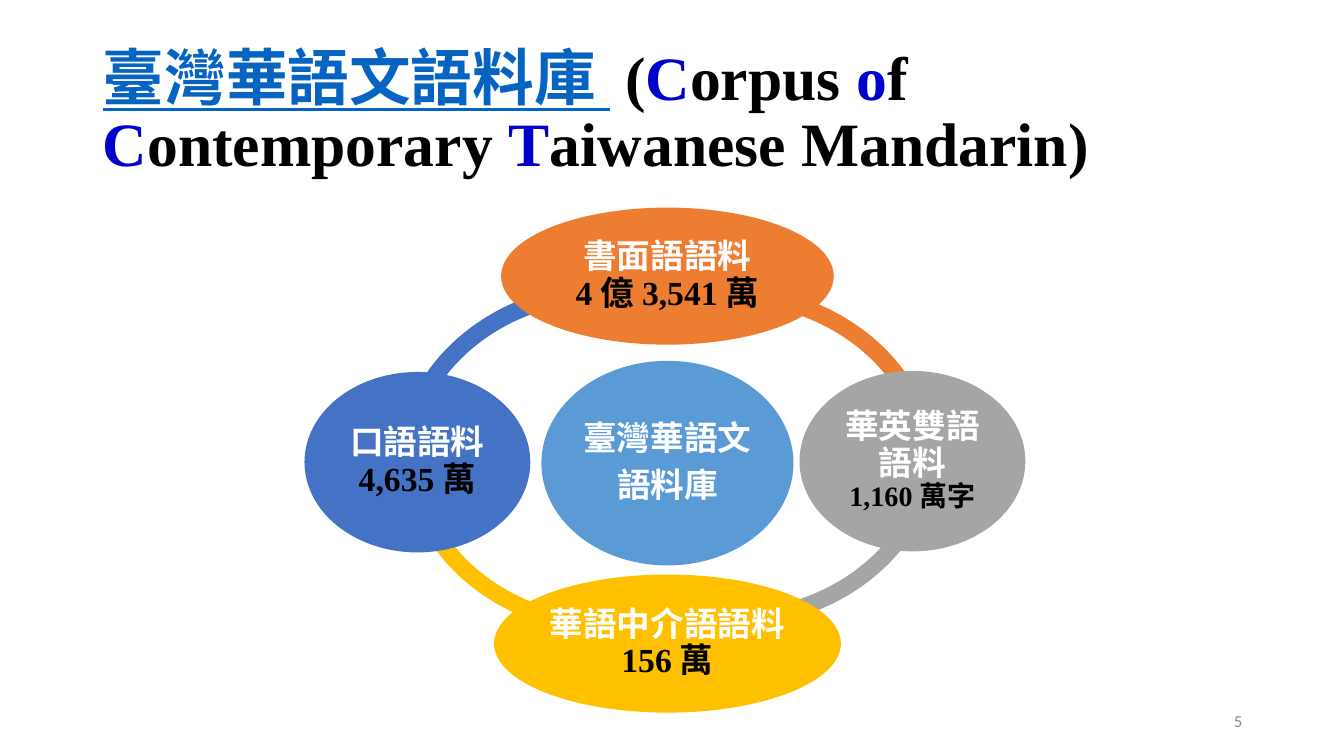
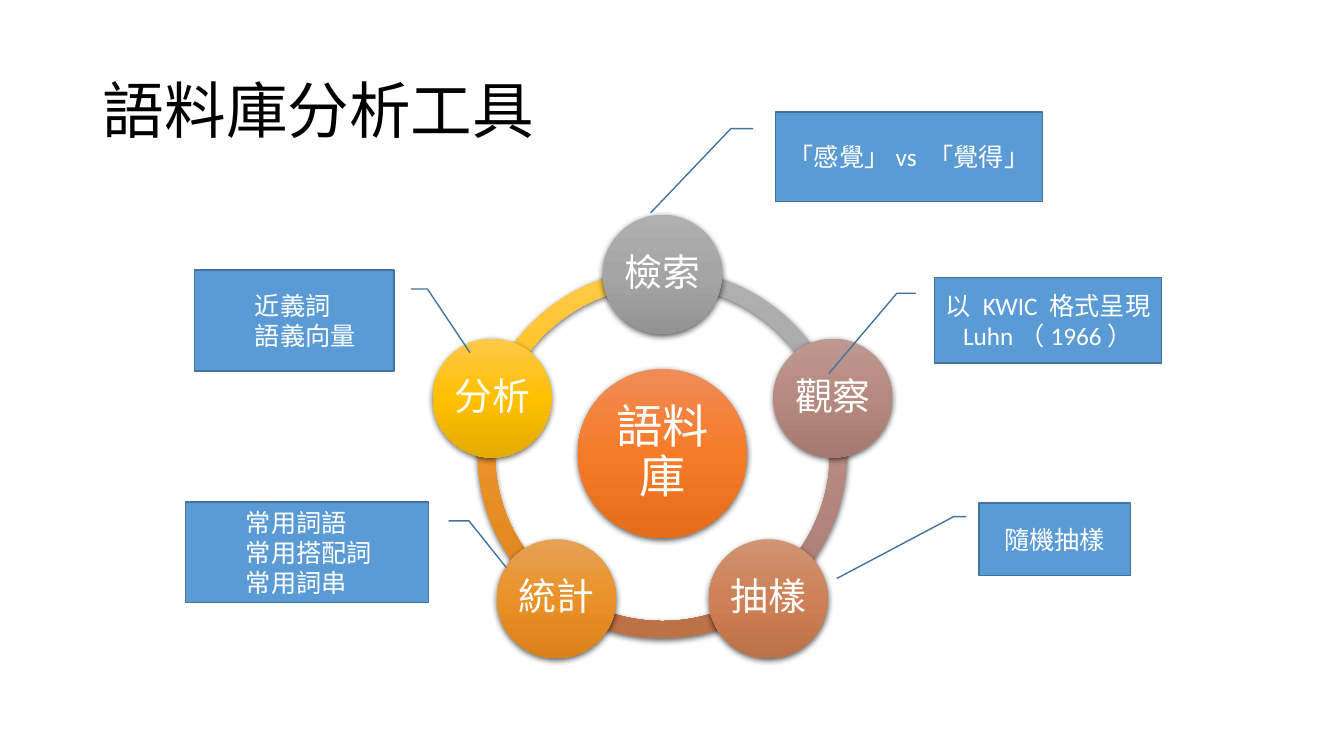
from copy import deepcopy
from dataclasses import dataclass
from math import cos, radians, sin
from typing import Optional, Sequence, Union

from lxml.etree import SubElement
from pptx import Presentation
from pptx.dml.color import RGBColor
from pptx.enum.shapes import MSO_SHAPE as Preset
from pptx.enum.text import MSO_ANCHOR as Anchor, MSO_AUTO_SIZE as AutoSize, PP_ALIGN as Align
from pptx.oxml.ns import qn
from pptx.util import Emu, Pt

EMU_PER_PX = 9144


@dataclass(frozen=True)
class Theme:
    """Colours, fonts and type sizes of the deck."""

    black: str = "000000"
    white: str = "FFFFFF"
    link: str = "0563C1"
    initial: str = "0000CC"
    page_number: str = "8C8C8C"
    blue: str = "4472C4"
    sky: str = "5B9BD5"
    orange: str = "ED7D31"
    gray: str = "A5A5A5"
    yellow: str = "FFC000"
    callout_line: str = "43739E"
    core_shades: tuple = ("F18C57", "F67B28", "E56C19")
    gray_shades: tuple = ("AFAFAF", "A5A5A5", "939393")
    rose_shades: tuple = ("BD9991", "B78A80", "A5796F")
    copper_shades: tuple = ("CF9472", "CE8156", "BD7147")
    amber_shades: tuple = ("E6A256", "EA9127", "DA8219")
    yellow_shades: tuple = ("FFC94B", "FFC000", "E3AB00")
    sans: str = "Calibri"
    serif: str = "Times New Roman"
    alternate: str = "Arial"
    cjk: str = "Noto Sans CJK SC"
    title_size: int = 44
    core_size: int = 33
    node_size: int = 27
    corpus_size: int = 24
    small_size: int = 20
    callout_size: int = 18
    number_size: int = 12


THEME = Theme()


@dataclass(frozen=True)
class Box:
    """A frame in px."""

    left: int
    top: int
    width: int
    height: int

    def emu(self) -> list:
        """Return the frame in EMU."""
        return [px(n) for n in (self.left, self.top, self.width, self.height)]


@dataclass(frozen=True)
class Span:
    """A stretch of text with its own format."""

    text: str
    color: Optional[str] = None
    font: Optional[str] = None
    size: Optional[int] = None
    underline: bool = False


Para = Sequence[Union[str, Span]]


@dataclass(frozen=True)
class Arc:
    """A ring segment between two angles in degrees."""

    box: Box
    start: float
    end: float
    color: str


@dataclass(frozen=True)
class Corpus:
    """An ellipse that names a corpus and its volume."""

    box: Box
    color: str
    paras: Sequence[Para]
    after: int = 0


@dataclass(frozen=True)
class Tool:
    """A step on the tool ring."""

    label: str
    shades: tuple


@dataclass(frozen=True)
class Callout:
    """A note with a bent leader that ends at a relative point."""

    box: Box
    lines: Sequence[str]
    tip: tuple = (1.125, -0.4667)
    flipped: bool = False


def px(length: float) -> Emu:
    """Turn px into EMU."""
    return Emu(round(length * EMU_PER_PX))


def rgb(color: str) -> RGBColor:
    """Turn a hex string into a colour."""
    return RGBColor.from_string(color)


def write(shape, paras: Sequence[Para], *, size: int, color: str = THEME.white,
          font: str = THEME.sans, bold: bool = False, align=Align.CENTER,
          inset: Optional[int] = None, spacing: float = 1, after: int = 0,
          indent: int = 0) -> None:
    """Fill a shape with formatted paragraphs."""
    frame = shape.text_frame
    frame.word_wrap = True
    frame.auto_size = AutoSize.NONE
    frame.vertical_anchor = Anchor.MIDDLE
    if inset is not None:
        frame.margin_left = frame.margin_right = px(inset)
        frame.margin_top = frame.margin_bottom = px(inset)
    for index, spans in enumerate(paras):
        para = frame.add_paragraph() if index else frame.paragraphs[0]
        para.alignment = align
        para.line_spacing = spacing
        para.space_before = Pt(0)
        para.space_after = Pt(after)
        if indent:
            para._p.get_or_add_pPr().set("marL", str(px(indent)))
        for item in spans:
            span = Span(item) if isinstance(item, str) else item
            run = para.add_run()
            run.text = span.text
            run.font.size = Pt(span.size or size)
            run.font.bold = bold
            run.font.underline = span.underline
            run.font.color.rgb = rgb(span.color or color)
            run.font.name = span.font or font
            east = SubElement(run.font._element, qn("a:ea"))
            east.set("typeface", THEME.cjk)


def add_shape(page, preset, box: Box, color: str, line: Optional[str] = None):
    """Add a flat preset shape."""
    shape = page.shapes.add_shape(preset, *box.emu())
    shape.shadow.inherit = False
    shape.fill.solid()
    shape.fill.fore_color.rgb = rgb(color)
    if line:
        shape.line.color.rgb = rgb(line)
        shape.line.width = Pt(1)
    else:
        shape.line.fill.background()
    return shape


def add_arc(page, arc: Arc):
    """Add a ring segment."""
    shape = add_shape(page, Preset.BLOCK_ARC, arc.box, arc.color)
    for index, value in enumerate((arc.start * 0.6, arc.end * 0.6, 0.046)):
        shape.adjustments[index] = value
    return shape


def add_gloss(shape, shades: tuple) -> None:
    """Give a shape a three-stop gradient and a soft shadow."""
    shape.fill.gradient()
    shape.fill.gradient_angle = 270
    properties = shape.element.spPr
    stops = properties.find(".//" + qn("a:gsLst"))
    stops.insert(1, deepcopy(stops[0]))
    for stop, position, shade in zip(shape.fill.gradient_stops, (0, 0.5, 1), shades):
        stop.position = position
        stop.color.rgb = rgb(shade)
    shadow = SubElement(properties.find(qn("a:effectLst")), qn("a:outerShdw"),
                        blurRad=str(Pt(4.5)), dist=str(Pt(1.5)), dir="5400000",
                        algn="ctr", rotWithShape="0")
    tint = SubElement(shadow, qn("a:srgbClr"), val=THEME.black)
    SubElement(tint, qn("a:alpha"), val="63000")


def add_disc(page, center: tuple, radius: int, tool: Tool, size: int, inset: int) -> None:
    """Add a glossy labelled circle."""
    x, y = center
    box = Box(round(x) - radius, round(y) - radius, 2 * radius, 2 * radius)
    disc = add_shape(page, Preset.OVAL, box, tool.shades[1])
    add_gloss(disc, tool.shades)
    write(disc, [[tool.label]], size=size, inset=inset, spacing=0.9, after=round(size * 0.35))


def add_callout(page, note: Callout) -> None:
    """Add a note with its leader."""
    shape = add_shape(page, Preset.LINE_CALLOUT_2, note.box, THEME.sky, THEME.callout_line)
    for index, value in enumerate((0.1875, -0.0833, 0.1875, -0.1667, *note.tip)):
        shape.adjustments[index] = value
    if note.flipped:
        shape.element.spPr.find(qn("a:xfrm")).set("flipH", "1")
    write(shape, [[line] for line in note.lines], size=THEME.callout_size,
          align=Align.LEFT if note.flipped else Align.CENTER,
          indent=50 if note.flipped else 0)


def add_page(deck, title: Para, *, font: str = THEME.sans, bold: bool = False):
    """Add a title-only slide."""
    page = deck.slides.add_slide(deck.slide_layouts[5])
    heading = page.shapes.title
    heading.left, heading.top, heading.width, heading.height = Box(92, 40, 1150, 145).emu()
    write(heading, [title], size=THEME.title_size, color=THEME.black, font=font,
          bold=bold, align=Align.LEFT, spacing=0.9)
    return page


def build_corpus_page(deck) -> None:
    """Build the overview of the four corpora."""
    title = [Span("臺灣華語文語料庫 ", THEME.link, underline=True), "(",
             Span("C", THEME.initial), "orpus ", Span("o", THEME.initial), "f ",
             Span("C", THEME.initial), "ontemporary ", Span("T", THEME.initial),
             "aiwanese Mandarin)"]
    page = add_page(deck, title, font=THEME.serif, bold=True)
    for arc in (Arc(Box(392, 281, 423, 373), 185.05, 281.7, THEME.blue),
                Arc(Box(399, 264, 423, 366), 78.2, 173.95, THEME.yellow),
                Arc(Box(509, 260, 423, 363), 5.97, 100.74, THEME.gray),
                Arc(Box(507, 283, 423, 368), 259.3, 354.47, THEME.orange)):
        add_arc(page, arc)

    def number(text: str, size: Optional[int] = None) -> Span:
        """Format digits."""
        return Span(text, THEME.black, THEME.serif, size)

    def unit(text: str, font: str = THEME.alternate, size: Optional[int] = None) -> Span:
        """Format a counting unit."""
        return Span(text, THEME.black, font, size)

    small = THEME.small_size
    for corpus in (
        Corpus(Box(537, 358, 250, 203), THEME.sky, [["臺灣華語文"], ["語料庫"]], after=8),
        Corpus(Box(497, 206, 330, 136), THEME.orange,
               [["書面語語料"], [number("4"), unit("億", THEME.sans),
                            number("3,541"), unit("萬", THEME.sans)]]),
        Corpus(Box(793, 368, 224, 179), THEME.gray,
               [["華英雙語"], ["語料"], [number("1,160", small), unit("萬字", size=small)]]),
        Corpus(Box(490, 570, 344, 137), THEME.yellow,
               [["華語中介語語料"], [number("156"), unit("萬")]]),
        Corpus(Box(302, 369, 224, 179), THEME.blue,
               [["口語語料"], [number("4,635"), unit("萬")]]),
    ):
        ellipse = add_shape(page, Preset.OVAL, corpus.box, corpus.color)
        write(ellipse, corpus.paras, size=THEME.corpus_size, font=THEME.cjk, bold=True,
              inset=3, spacing=0.9, after=corpus.after)
    footer = page.shapes.add_textbox(*Box(942, 695, 300, 40).emu())
    write(footer, [["5"]], size=THEME.number_size, color=THEME.page_number, align=Align.RIGHT)


def build_tools_page(deck) -> None:
    """Build the ring of analysis tools with its notes."""
    page = add_page(deck, ["語料庫分析工具"])
    tools = (Tool("檢索", THEME.gray_shades), Tool("觀察", THEME.rose_shades),
             Tool("抽樣", THEME.copper_shades), Tool("統計", THEME.amber_shades),
             Tool("分析", THEME.yellow_shades))
    center_x, center_y, orbit, step = 657, 450, 178, 360 // len(tools)
    ring = Box(center_x - 183, center_y - 183, 366, 366)
    angles = [(270 + step * index) % 360 for index in range(len(tools))]
    for tool, angle in reversed(list(zip(tools, angles))):
        arc = Arc(ring, angle, (angle + step) % 360, tool.shades[1])
        add_gloss(add_arc(page, arc), tool.shades)
    add_disc(page, (center_x, center_y), 84, Tool("語料庫", THEME.core_shades),
             THEME.core_size, 5)
    for tool, angle in zip(tools, angles):
        center = (center_x + orbit * cos(radians(angle)), center_y + orbit * sin(radians(angle)))
        add_disc(page, center, 59, tool, THEME.node_size, 4)
    for note in (
        Callout(Box(769, 111, 265, 89), ["「感覺」vs 「覺得」"]),
        Callout(Box(927, 275, 225, 85), ["以 KWIC 格式呈現", "Luhn（1966）"]),
        Callout(Box(971, 499, 150, 72), ["隨機抽樣"], (1.04, -0.94)),
        Callout(Box(184, 498, 241, 100), ["常用詞語", "常用搭配詞", "常用詞串"],
                (0.65, -0.32), True),
        Callout(Box(193, 268, 198, 100), ["近義詞", "語義向量"], (0.82, -0.38), True),
    ):
        add_callout(page, note)


def main() -> None:
    """Build and save the deck."""
    deck = Presentation()
    deck.slide_width, deck.slide_height = px(1333), px(750)
    build_corpus_page(deck)
    build_tools_page(deck)
    deck.save("out.pptx")


if __name__ == "__main__":
    main()
